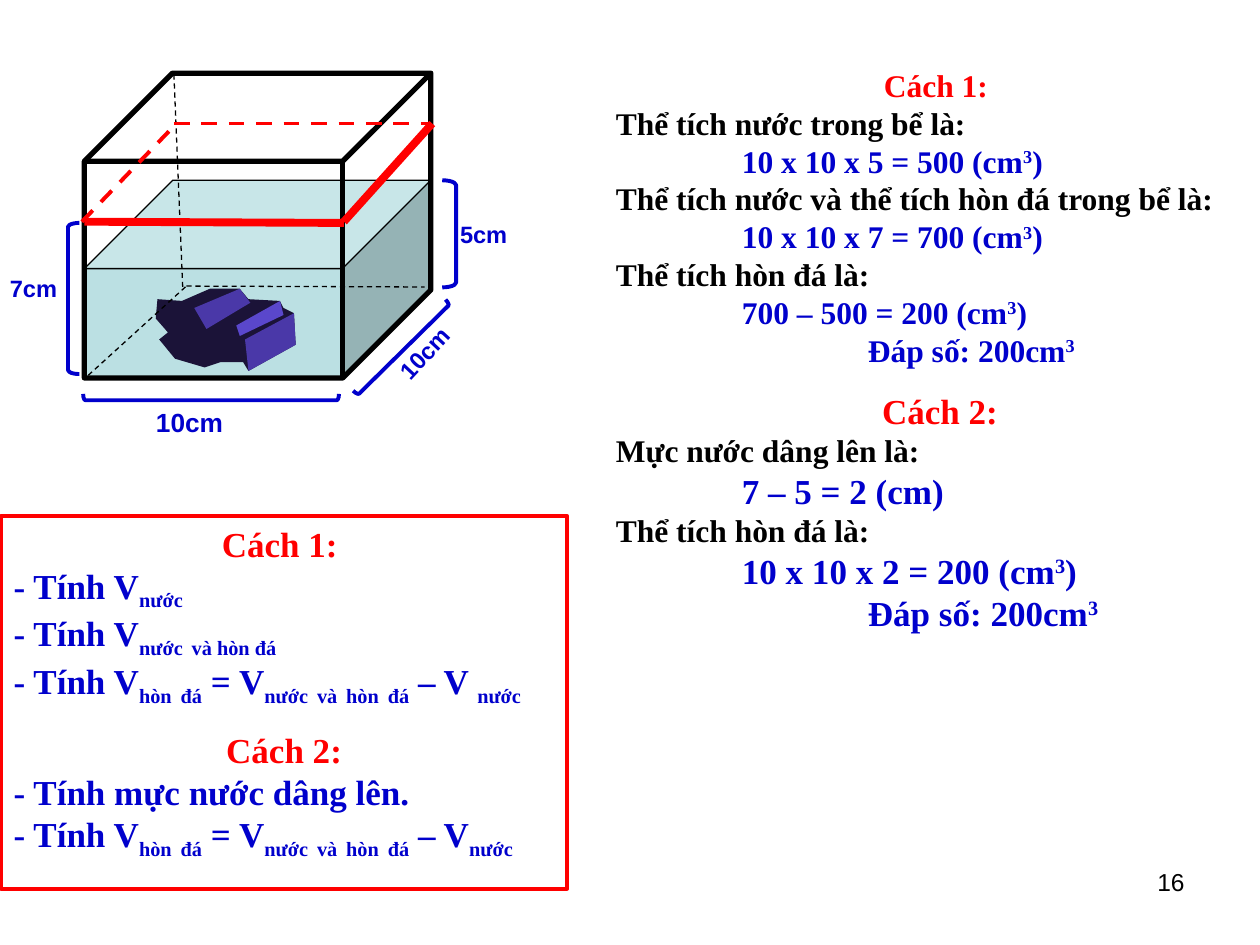
from pptx import Presentation
from pptx.dml.color import RGBColor
from pptx.enum.dml import MSO_LINE
from pptx.enum.shapes import MSO_CONNECTOR, MSO_SHAPE
from pptx.enum.text import MSO_ANCHOR, PP_ALIGN
from pptx.util import Pt
from lxml import etree

DASH, LINE = MSO_LINE.DASH, MSO_CONNECTOR.STRAIGHT
RECT, CUBE, BRACE = MSO_SHAPE.RECTANGLE, MSO_SHAPE.CUBE, MSO_SHAPE.RIGHT_BRACKET
TOP = MSO_ANCHOR.TOP
LEFT, MID, RIGHT = PP_ALIGN.LEFT, PP_ALIGN.CENTER, PP_ALIGN.RIGHT
RED, BLUE, BLACK = "FF0000", "0000CC", "000000"
SERIF, SANS = "Times New Roman", "Arial"
NS = "{http://schemas.openxmlformats.org/drawingml/2006/main}"
rgb = RGBColor.from_string

prs = Presentation()
prs.slide_width, prs.slide_height = Pt(720), Pt(540)
slide = prs.slides.add_slide(prs.slide_layouts[6])
shapes = slide.shapes


def paint(shape, fill, color, width):
    """Set fill and outline; None means no fill or no line."""
    shape.shadow.inherit = False
    if fill:
        shape.fill.solid()
        shape.fill.fore_color.rgb = rgb(fill)
    else:
        shape.fill.background()
    if color:
        shape.line.color.rgb = rgb(color)
        shape.line.width = Pt(width)
    else:
        shape.line.fill.background()


def write(shape, rows, font=SERIF, bold=True):
    """Rows are (text, size, color, align, space before); | splits runs, _ lowers, ^ raises."""
    frame = shape.text_frame
    frame.word_wrap, frame.vertical_anchor = True, TOP
    for i, (text, size, color, align, gap) in enumerate(rows):
        para = frame.add_paragraph() if i else frame.paragraphs[0]
        para.alignment, para.space_before = align, Pt(gap)
        if "\t" in text:
            tabs = etree.SubElement(para._p.get_or_add_pPr(), NS + "tabLst")
            for stop in (72, 144):
                etree.SubElement(tabs, NS + "tab", pos=str(int(Pt(stop))), algn="l")
        for part in text.split("|"):
            run = para.add_run()
            run.text = part.lstrip("_^")
            look = {"size": Pt(size), "bold": bold, "name": font}
            for key, val in look.items():
                setattr(run.font, key, val)
            run.font.color.rgb = rgb(color)
            shift = {"_": "-25000", "^": "30000"}.get(part[0])
            if shift:
                run.font._element.set("baseline", shift)


# Page number
page = shapes.add_textbox(Pt(516), Pt(492), Pt(168), Pt(37.5))
write(page, [("16", 14, BLACK, RIGHT, 0)], SANS, False)

# Framed outline of both methods
frame = shapes.add_shape(RECT, Pt(0.7), Pt(294.8), Pt(323.3), Pt(213.1))
paint(frame, None, RED, 2.25)
stone = "- Tính V|_hòn| |_đá| = V|_nước| |_và| |_hòn| |_đá| – V"
write(frame, [
    ("Cách 1: ", 20, RED, MID, 0),
    ("- Tính V|_nước ", 20, BLUE, LEFT, 0),
    ("- Tính V|_nước| |_và hòn đá ", 20, BLUE, LEFT, 0),
    (stone + " |_nước", 20, BLUE, LEFT, 0),
    ("Cách 2:", 20, RED, MID, 12),
    ("- Tính mực nước dâng lên.", 20, BLUE, LEFT, 0),
    (stone + "|_nước", 20, BLUE, LEFT, 0),
])

# Water
water = shapes.add_shape(CUBE, Pt(48.2), Pt(103), Pt(198), Pt(112.3))
water.adjustments[0] = 0.45
paint(water, "BBE0E3", BLACK, 0.75)

# Stone: dark face, then lit sides
for fill, dots in [
    ("1B1338", [(90, 171), (104, 172), (120, 165), (137, 165), (142, 171), (160, 172),
                (162, 176), (168, 179), (169, 197), (142, 212), (139, 207), (126, 207),
                (117, 210), (100, 205), (91, 194), (96, 190), (89, 182)]),
    ("4A38A8", [(111, 176), (137, 165), (143, 173), (118, 188)]),
    ("5A47CC", [(135, 186), (160, 172), (162, 180), (137, 192)]),
    ("4A38A8", [(140, 194), (168, 179), (169, 197), (142, 212)]),
]:
    path = shapes.build_freeform(*dots[0], scale=Pt(1))
    path.add_line_segments(dots[1:], close=True)
    paint(path.convert_to_shape(), fill, None, 0)

# Tank
tank = shapes.add_shape(CUBE, Pt(48.2), Pt(41.8), Pt(198), Pt(174.2))
tank.adjustments[0] = 0.289
paint(tank, None, BLACK, 3)

# Hidden edges and raised water level
for x1, y1, x2, y2, color, width, dash in [
    (99.4, 42.5, 104.4, 164, BLACK, 0.75, DASH),
    (106.5, 163.5, 242.6, 164, BLACK, 0.75, DASH),
    (50.4, 214.5, 106.5, 163.5, BLACK, 0.75, DASH),
    (46.8, 126.7, 100.8, 70.6, RED, 2.25, DASH),
    (99.4, 70.6, 245.5, 70.6, RED, 2.25, DASH),
    (247, 70.6, 196.5, 126.7, RED, 4.5, None),
    (196.5, 127.4, 48.2, 126.7, RED, 4.5, None),
]:
    edge = shapes.add_connector(LINE, Pt(x1), Pt(y1), Pt(x2), Pt(y2))
    edge.line.color.rgb = rgb(color)
    edge.line.width = Pt(width)
    edge.line.dash_style = dash
    etree.SubElement(edge._element.spPr, NS + "effectLst")

# Dimension brackets
for x, y, w, h, turn, flip in [
    (38.9, 127.4, 6.5, 86.4, 0, True),
    (252.7, 103, 7.9, 61.2, 180, True),
    (118.8, 153.8, 3.6, 146.2, 90, False),
    (227.5, 161.3, 3.6, 74.2, 225.4, True),
]:
    brace = shapes.add_shape(BRACE, Pt(x), Pt(y), Pt(w), Pt(h))
    brace.adjustments[0] = 0.347
    brace.rotation = turn
    if flip:
        brace._element.spPr.find(NS + "xfrm").set("flipH", "1")
    paint(brace, None, BLUE, 2.25)

# Dimension labels
for text, x, y, w, h, turn, size in [
    ("7cm", -1.4, 153, 43.2, 20.2, 0, 13.5),
    ("5cm", 255.8, 122.4, 49.7, 19.4, 0, 13.5),
    ("10cm", 82, 228.6, 87.8, 25.2, 0, 15),
    ("10cm", 211, 173.5, 93.6, 23.8, 312.8, 13.5),
]:
    label = shapes.add_textbox(Pt(x), Pt(y), Pt(w), Pt(h))
    label.rotation = turn
    write(label, [(text, size, BLUE, LEFT, 0)], SANS)

# Worked solutions
work = shapes.add_textbox(Pt(344.9), Pt(34.2), Pt(384.5), Pt(363.6))
write(work, [
    ("Cách 1: ", 18, RED, MID, 0),
    ("Thể tích nước trong bể là: ", 18, BLACK, LEFT, 0),
    ("\t10 x 10 x 5 = 500 (cm|^3|)", 18, BLUE, LEFT, 0),
    ("Thể tích nước và thể tích hòn đá trong bể là: ", 18, BLACK, LEFT, 0),
    ("\t10 x 10 x 7 = 700 (cm|^3|)", 18, BLUE, LEFT, 0),
    ("Thể tích hòn đá là: ", 18, BLACK, LEFT, 0),
    ("\t700 – 500 = 200 (cm|^3|)", 18, BLUE, LEFT, 0),
    ("\t\tĐáp số: 200cm|^3", 18, BLUE, LEFT, 0),
    ("Cách 2:", 20, RED, MID, 12),
    ("Mực nước dâng lên là: ", 18, BLACK, LEFT, 0),
    ("\t7 – 5 = 2 (cm)", 20, BLUE, LEFT, 0),
    ("Thể tích hòn đá là: ", 18, BLACK, LEFT, 0),
    ("\t10 x 10 x 2 = 200 (cm|^3|)", 20, BLUE, LEFT, 0),
    ("\t\tĐáp số: 200cm|^3", 20, BLUE, LEFT, 0),
])

prs.save("out.pptx")
